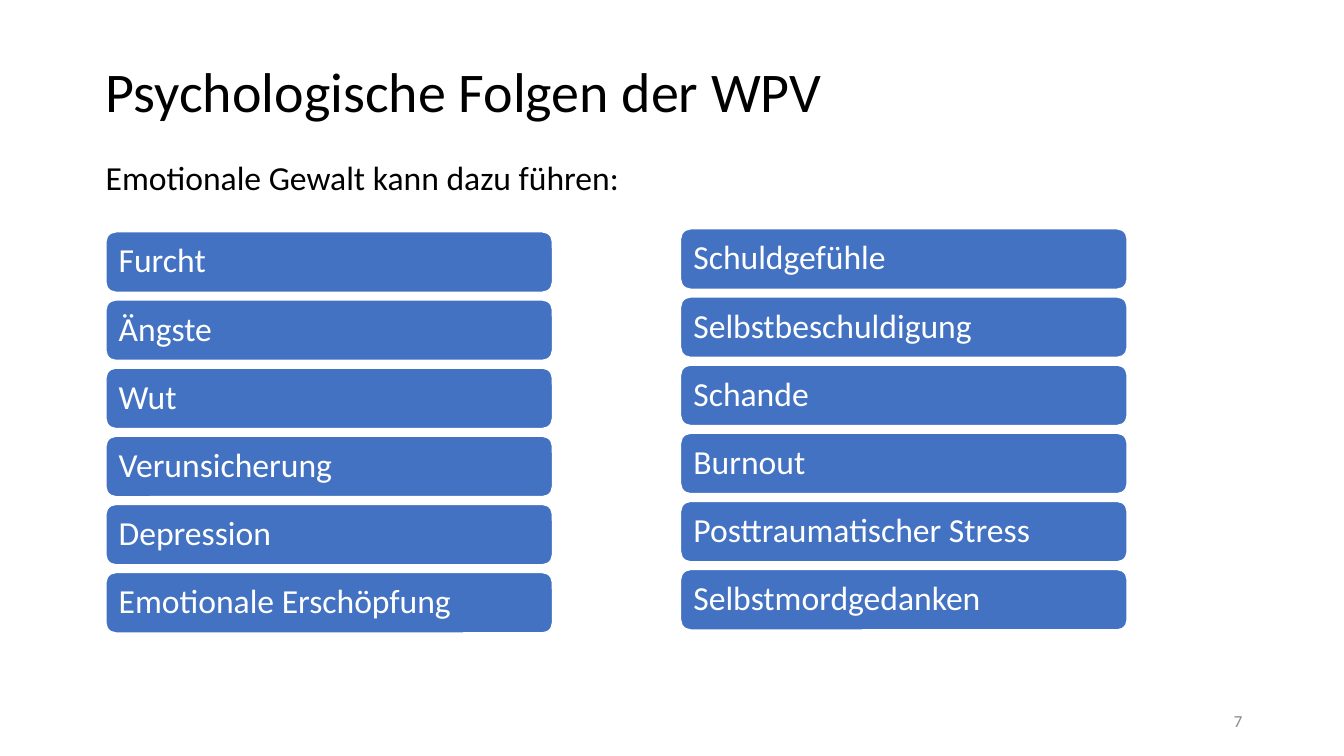
from dataclasses import dataclass

from pptx import Presentation
from pptx.dml.color import RGBColor
from pptx.enum.shapes import MSO_SHAPE
from pptx.enum.text import MSO_ANCHOR, PP_ALIGN
from pptx.shapes.autoshape import Shape
from pptx.slide import Slide
from pptx.util import Inches, Pt

BLACK = RGBColor(0x00, 0x00, 0x00)
WHITE = RGBColor(0xFF, 0xFF, 0xFF)
GRAY = RGBColor(0x88, 0x88, 0x88)
BLUE = RGBColor(0x43, 0x72, 0xC3)

BAR_WIDTH, BAR_HEIGHT, BAR_PITCH = 4.43, 0.6, 0.676


@dataclass(frozen=True)
class Label:
    text: str
    left: float
    top: float
    width: float
    height: float
    size: int
    color: RGBColor = BLACK
    align: PP_ALIGN = PP_ALIGN.LEFT
    line_spacing: float = 1.0


@dataclass(frozen=True)
class BarColumn:
    left: float
    top: float
    effects: tuple[str, ...]


LABELS = (
    Label("Psychologische Folgen der WPV", 0.95, 0.41, 10.08, 1.06, 40, line_spacing=0.9),
    Label("Emotionale Gewalt kann dazu führen:", 0.95, 1.1, 9.96, 1.31, 24),
    Label("7", 9.42, 6.95, 3, 0.4, 12, GRAY, PP_ALIGN.RIGHT),
)

COLUMNS = (
    BarColumn(1.05, 2.3, ("Furcht", "Ängste", "Wut", "Verunsicherung",
                          "Depression", "Emotionale Erschöpfung")),
    BarColumn(6.75, 2.27, ("Schuldgefühle", "Selbstbeschuldigung", "Schande", "Burnout",
                           "Posttraumatischer Stress", "Selbstmordgedanken")),
)


def apply_format(target: object, values: dict[str, object]) -> None:
    for name, value in values.items():
        setattr(target, name, value)


def write_text(box: Shape, label: Label) -> None:
    apply_format(box.text_frame, {
        "word_wrap": True,
        "vertical_anchor": MSO_ANCHOR.MIDDLE,
        "margin_left": Inches(0.1),
        "margin_right": Inches(0.1),
        "margin_top": Inches(0.05),
        "margin_bottom": Inches(0.05),
    })
    para = box.text_frame.paragraphs[0]
    apply_format(para, {"alignment": label.align, "line_spacing": label.line_spacing})
    span = para.add_run()
    span.text = label.text
    apply_format(span.font, {"name": "Calibri", "size": Pt(label.size)})
    span.font.color.rgb = label.color


def add_label(page: Slide, label: Label) -> None:
    box = page.shapes.add_textbox(
        Inches(label.left), Inches(label.top), Inches(label.width), Inches(label.height))
    write_text(box, label)


def add_bar(page: Slide, label: Label) -> None:
    bar = page.shapes.add_shape(
        MSO_SHAPE.ROUNDED_RECTANGLE,
        Inches(label.left), Inches(label.top), Inches(label.width), Inches(label.height))
    bar.shadow.inherit = False
    bar.fill.solid()
    bar.fill.fore_color.rgb = BLUE
    bar.line.color.rgb = WHITE
    bar.line.width = Pt(1)
    write_text(bar, label)


def add_column(page: Slide, column: BarColumn) -> None:
    for row, effect in enumerate(column.effects):
        add_bar(page, Label(effect, column.left, column.top + row * BAR_PITCH,
                            BAR_WIDTH, BAR_HEIGHT, 24, WHITE, line_spacing=0.9))


def main() -> None:
    deck = Presentation()
    apply_format(deck, {"slide_width": Inches(13.33), "slide_height": Inches(7.5)})
    page = deck.slides.add_slide(deck.slide_layouts[6])
    for label in LABELS:
        add_label(page, label)
    for column in COLUMNS:
        add_column(page, column)
    deck.save("out.pptx")


if __name__ == "__main__":
    main()
